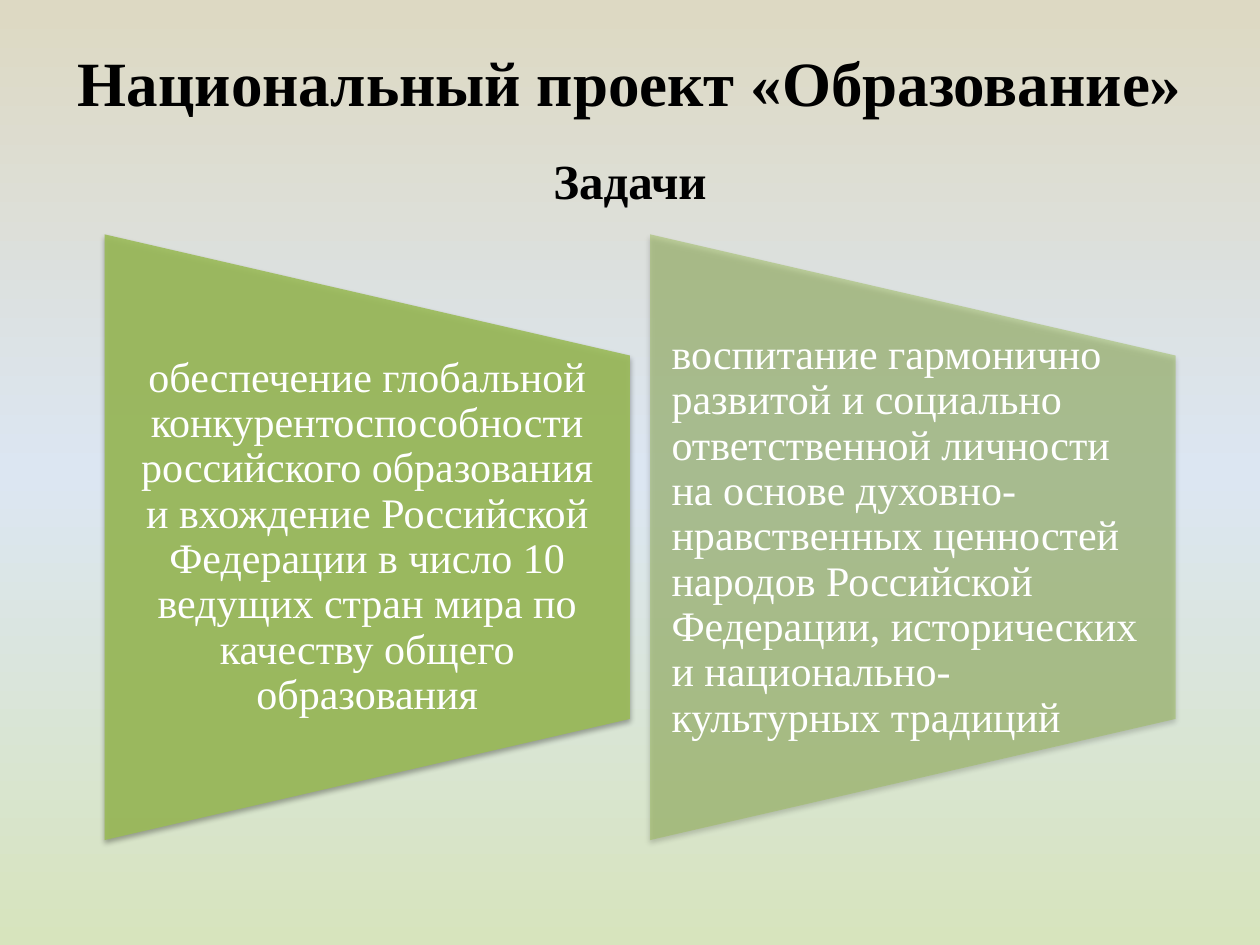
"""Build a slide with a title and two tapered panels of project tasks."""
from dataclasses import dataclass

from lxml import etree
from pptx import Presentation
from pptx import util as u
from pptx.dml.color import RGBColor
from pptx.enum import shapes, text
from pptx.oxml.ns import qn

BLACK = RGBColor(0x00, 0x00, 0x00)
WHITE = RGBColor(0xFF, 0xFF, 0xFF)
GREEN = RGBColor(0x9B, 0xBB, 0x59)
SAND = RGBColor(0xDD, 0xD9, 0xC3)
SKY = RGBColor(0xDC, 0xE6, 0xF2)
LEAF = RGBColor(0xD7, 0xE4, 0xBD)
FONT = "Times New Roman"
WIDE, HIGH = 10, 7.5
LEFT, TOP, STEP = 0.083, 0.248, 0.433
COL, ROW = 0.417, 0.641
CENTER, START = text.PP_ALIGN.CENTER, text.PP_ALIGN.LEFT
MIDDLE, UPPER = text.MSO_ANCHOR.MIDDLE, text.MSO_ANCHOR.TOP


@dataclass
class Area:
    """Place on the slide, in shares of its width and height."""
    x: float
    y: float
    w: float
    h: float

    def box(self) -> list:
        """Return left, top, width and height as lengths."""
        return [u.Inches(self.x * WIDE), u.Inches(self.y * HIGH),
                u.Inches(self.w * WIDE), u.Inches(self.h * HIGH)]


@dataclass
class Label:
    """Words with their area and format."""
    words: str
    area: Area
    size: int
    color: RGBColor = BLACK
    bold: bool = True
    align: text.PP_ALIGN = CENTER
    anchor: text.MSO_ANCHOR = MIDDLE
    side: float = 0
    edge: float = 0
    lines: float = 1.0


@dataclass
class Panel:
    """Tapered panel with its opacity and task."""
    words: str
    alpha: int
    align: text.PP_ALIGN


HEADS = [
    Label("Национальный проект «Образование»", Area(0.05, 0.04, 0.9, 0.092), 36),
    Label("Задачи", Area(0.25, 0.153, 0.5, 0.076), 28, anchor=UPPER, side=0.1, edge=0.05),
]
PANELS = [
    Panel("обеспечение глобальной конкурентоспособности российского образования "
          "и вхождение Российской Федерации в число 10 ведущих стран мира "
          "по качеству общего образования", 90, CENTER),
    Panel("воспитание гармонично развитой и социально ответственной личности "
          "на основе духовно-нравственных ценностей народов Российской Федерации, "
          "исторических и национально-культурных традиций", 50, START),
]


def assign(item, values: dict) -> None:
    """Set each attribute of the item from a dict."""
    for name, value in values.items():
        setattr(item, name, value)


def node(parent, tag: str, **values):
    """Add a drawing element with attributes."""
    return etree.SubElement(parent, qn(tag), {k: str(v) for k, v in values.items()})


def paint(slide) -> None:
    """Fill the background with a vertical three-color gradient."""
    fill = slide.background.fill
    fill.gradient()
    fill.gradient_angle = 270
    stops = slide.background._cSld.find(".//" + qn("a:gsLst"))
    for stop in list(stops):
        stops.remove(stop)
    for share, color in ((1, SAND), (50, SKY), (100, LEAF)):
        node(node(stops, "a:gs", pos=share * 1000), "a:srgbClr", val=color)


def write(slide, label: Label) -> None:
    """Add a text box for the label."""
    frame = slide.shapes.add_textbox(*label.area.box()).text_frame
    side, edge = u.Inches(label.side), u.Inches(label.edge)
    assign(frame, dict(word_wrap=True, vertical_anchor=label.anchor, margin_left=side,
                       margin_right=side, margin_top=edge, margin_bottom=edge))
    para = frame.paragraphs[0]
    assign(para, dict(alignment=label.align, line_spacing=label.lines))
    run = para.add_run()
    run.text = label.words
    assign(run.font, dict(name=FONT, size=u.Pt(label.size), bold=label.bold))
    run.font.color.rgb = label.color


def taper(slide, area: Area, alpha: int) -> None:
    """Add a turned panel that covers the area, with a soft shadow."""
    x, y, w, h = area.box()
    shape = slide.shapes.add_shape(shapes.MSO_SHAPE.FLOWCHART_MANUAL_OPERATION,
                                   x + (w - h) // 2, y + (h - w) // 2, h, w)
    shape.rotation = 270
    shape.shadow.inherit = False
    shape.line.fill.background()
    shape.fill.solid()
    shape.fill.fore_color.rgb = GREEN
    props = shape._element.spPr
    node(props.find(".//" + qn("a:srgbClr")), "a:alpha", val=alpha * 1000)
    shade = node(props.find(qn("a:effectLst")), "a:outerShdw", blurRad=u.Pt(3.1),
                 dist=u.Pt(1.8), dir=5400000, rotWithShape=0)
    node(node(shade, "a:srgbClr", val=BLACK), "a:alpha", val=35000)


def main() -> None:
    """Build and save the slide."""
    deck = Presentation()
    assign(deck, dict(slide_width=u.Inches(WIDE), slide_height=u.Inches(HIGH)))
    slide = deck.slides.add_slide(deck.slide_layouts[6])
    paint(slide)
    for head in HEADS:
        write(slide, head)
    for i, panel in enumerate(PANELS):
        area = Area(LEFT + i * STEP, TOP, COL, ROW)
        taper(slide, area, panel.alpha)
        inner = Area(area.x, TOP + ROW / 5, COL, ROW * 3 / 5)
        write(slide, Label(panel.words, inner, 24, WHITE, False, panel.align,
                           side=0.17, lines=0.9))
    deck.save("out.pptx")


if __name__ == "__main__":
    main()
